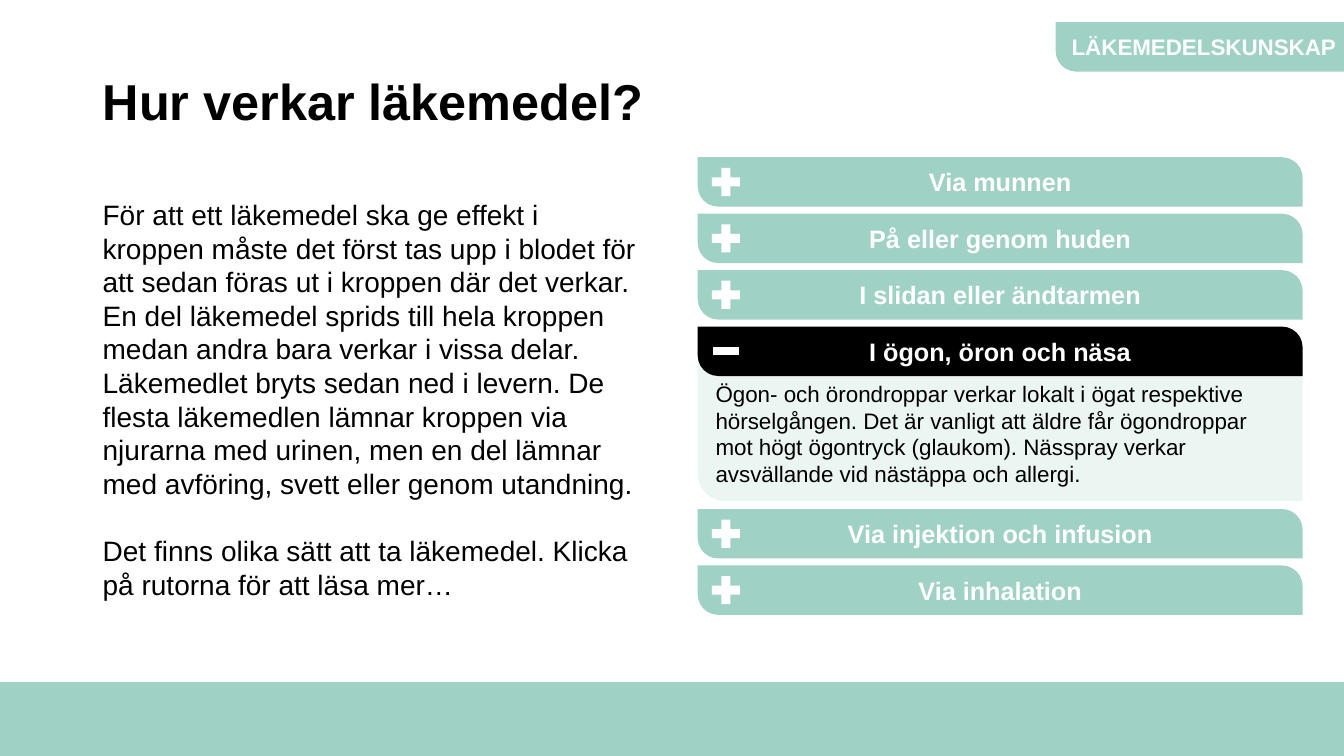
from pptx import Presentation
from pptx.dml.color import RGBColor
from pptx.enum.shapes import MSO_SHAPE as SHAPE
from pptx.enum.text import MSO_ANCHOR as ANCHOR, PP_ALIGN as ALIGN
from pptx.util import Inches, Pt

MINT = RGBColor(0x9F, 0xD2, 0xC5)
PALE = RGBColor(0xEB, 0xF5, 0xF2)
BLACK = RGBColor(0, 0, 0)
WHITE = RGBColor(255, 255, 255)

TITLE = "Hur verkar läkemedel?"
TAG = "LÄKEMEDELSKUNSKAP"
BODY = [
    "För att ett läkemedel ska ge effekt i kroppen måste det först tas upp i blodet för att sedan föras ut i "
    "kroppen där det verkar. En del läkemedel sprids till hela kroppen medan andra bara verkar i vissa delar. "
    "Läkemedlet bryts sedan ned i levern. De flesta läkemedlen lämnar kroppen via njurarna med urinen, men en "
    "del lämnar med avföring, svett eller genom utandning.",
    "Det finns olika sätt att ta läkemedel. Klicka på rutorna för att läsa mer…",
]
ROUTES = ["Via munnen", "På eller genom huden", "I slidan eller ändtarmen", "I ögon, öron och näsa",
          "Via injektion och infusion", "Via inhalation"]
OPEN = 3
DETAIL = ("Ögon- och örondroppar verkar lokalt i ögat respektive hörselgången. Det är vanligt att äldre får "
          "ögondroppar mot högt ögontryck (glaukom). Nässpray verkar avsvällande vid nästäppa och allergi.")

WIDTH, HEIGHT = 13.33, 7.5
MARGIN = 0.92
LIST_X, LIST_Y, LIST_W = 6.92, 1.56, 6
BAR_H, PITCH, OPENED = 0.49, 0.56, 1.25
DETAIL_H = 1.56
BAR_ROUND, DETAIL_ROUND = 0.417, 0.173

prs = Presentation()
prs.slide_width, prs.slide_height = Inches(WIDTH), Inches(HEIGHT)
s = prs.slides.add_slide(prs.slide_layouts[6])


def write(sp, paragraphs, size, color=BLACK, bold=False, align=ALIGN.LEFT, anchor=ANCHOR.TOP, spacing=None, gap=0):
    tf = sp.text_frame
    tf.word_wrap = True
    tf.vertical_anchor = anchor
    for i, text in enumerate(paragraphs):
        p = tf.paragraphs[0] if i == 0 else tf.add_paragraph()
        p.alignment = align
        if spacing:
            p.line_spacing = spacing
        if i:
            p.space_before = Pt(gap)
        r = p.add_run()
        r.text = text
        for name, value in {"name": "Arial", "size": Pt(size), "bold": bold}.items():
            setattr(r.font, name, value)
        r.font.color.rgb = color


def shape(kind, x, y, w, h, fill, rounding=None):
    sp = s.shapes.add_shape(kind, *map(Inches, (x, y, w, h)))
    sp.shadow.inherit = False
    sp.fill.solid()
    sp.fill.fore_color.rgb = fill
    sp.line.fill.background()
    if rounding:
        sp.adjustments[0] = 0
        sp.adjustments[1] = rounding
    return sp


def text_box(x, y, w, h, paragraphs, size, **style):
    write(s.shapes.add_textbox(*map(Inches, (x, y, w, h))), paragraphs, size, **style)


def bar_top(i):
    return LIST_Y + i * PITCH + (OPENED if i > OPEN else 0)


footer = shape(SHAPE.RECTANGLE, 0, 6.77, WIDTH, HEIGHT - 6.77, MINT)
footer.line.color.rgb = MINT
footer.line.width = Pt(1)

detail = shape(SHAPE.ROUND_2_DIAG_RECTANGLE, LIST_X, bar_top(OPEN) + 0.17, LIST_W, DETAIL_H, PALE, DETAIL_ROUND)
write(detail, [DETAIL], 16)
detail.text_frame.margin_top = Inches(0.28)

text_box(MARGIN, 0.71, 11.5, 1.1, [TITLE], 36, bold=True, spacing=0.9)
tag = shape(SHAPE.ROUND_2_DIAG_RECTANGLE, 10.47, 0.22, 3.62, BAR_H, MINT, BAR_ROUND)
write(tag, [TAG], 16, WHITE, True, anchor=ANCHOR.MIDDLE)
text_box(MARGIN, 1.91, 5.5, 4.14, BODY, 20, gap=24)

for i, route in enumerate(ROUTES):
    opened = i == OPEN
    bar = shape(SHAPE.ROUND_2_DIAG_RECTANGLE, LIST_X, bar_top(i), LIST_W, BAR_H, BLACK if opened else MINT, BAR_ROUND)
    write(bar, [route], 18, WHITE, True, ALIGN.CENTER, ANCHOR.MIDDLE)
    sign, side = (SHAPE.MATH_MINUS, 0.36) if opened else (SHAPE.MATH_PLUS, 0.38)
    shape(sign, LIST_X + 0.28 - side / 2, bar_top(i) + (BAR_H - side) / 2, side, side, WHITE)

prs.save("out.pptx")
